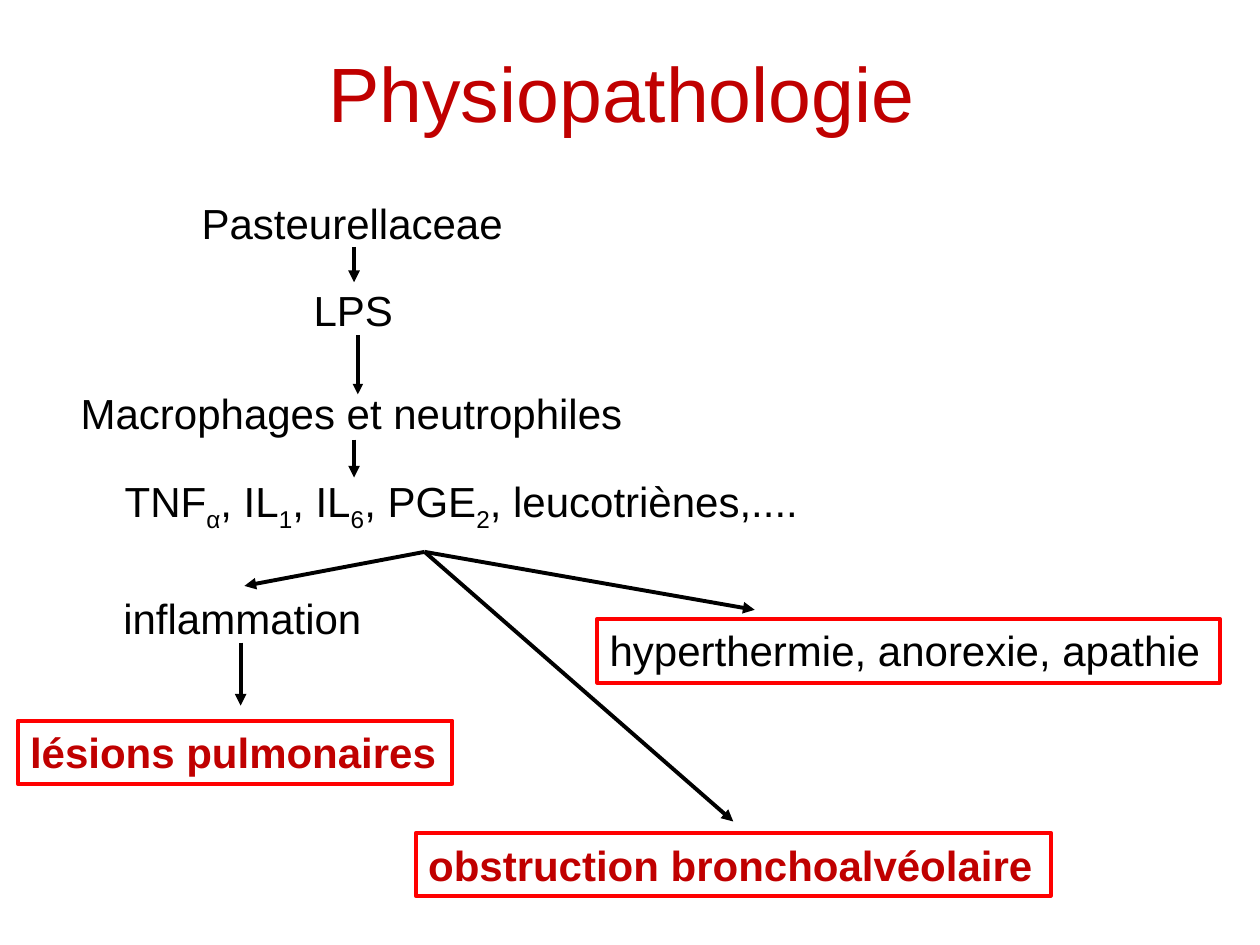
"""Build the Physiopathologie flow diagram slide."""
from dataclasses import dataclass

from lxml import etree
from pptx import Presentation
from pptx.dml.color import RGBColor
from pptx.enum.shapes import MSO_CONNECTOR, MSO_SHAPE
from pptx.enum.text import MSO_ANCHOR, MSO_AUTO_SIZE, PP_ALIGN
from pptx.oxml.ns import qn
from pptx.util import Inches, Pt

STRAIGHT, RECTANGLE = MSO_CONNECTOR.STRAIGHT, MSO_SHAPE.RECTANGLE
TOP, MIDDLE = MSO_ANCHOR.TOP, MSO_ANCHOR.MIDDLE
LEFT, CENTER = PP_ALIGN.LEFT, PP_ALIGN.CENTER
FIT_SHAPE, NO_FIT = MSO_AUTO_SIZE.SHAPE_TO_FIT_TEXT, MSO_AUTO_SIZE.NONE

COLORS = {"text": "000000", "accent": "C00000", "border": "FF0000"}
SUBSCRIPT = "-25000"
WIDE, TIGHT = (0.1, 0.05), (0.06, 0.01)


@dataclass
class Label:
    """Text at a place; pieces between bars alternate normal and subscript."""
    text: str
    at: tuple[float, float, float, float]
    inset: tuple[float, float] = WIDE
    anchor: MSO_ANCHOR = TOP
    align: PP_ALIGN = LEFT
    fit: MSO_AUTO_SIZE = FIT_SHAPE
    wrap: bool = False
    spacing: float = 1.0
    size: int = 24
    color: str = "text"
    bold: bool = False
    boxed: bool = False


@dataclass
class Arrow:
    """Line with a triangle at its end."""
    start: tuple[float, float]
    end: tuple[float, float]
    width: float = 2.25


STEP = {"inset": TIGHT, "anchor": MIDDLE}
OUTCOME = {"color": "accent", "bold": True, "boxed": True}
LABELS = [
    Label("Physiopathologie", (0.45, 0.22, 8.97, 1.16), anchor=MIDDLE, align=CENTER,
          fit=NO_FIT, wrap=True, spacing=0.8, size=44, color="accent"),
    Label("Pasteurellaceae", (1.54, 1.53, 2.54, 0.43), spacing=1.1, **STEP),
    Label("LPS", (2.43, 2.24, 0.77, 0.43), **STEP),
    Label("Macrophages et neutrophiles", (0.58, 3.06, 4.47, 0.43), **STEP),
    Label("TNF|α|, IL|1|, IL|6|, PGE|2|, leucotriènes,....", (0.93, 3.79, 5.64, 0.43), **STEP),
    Label("inflammation", (0.88, 4.65, 2.11, 0.51)),
    Label("lésions pulmonaires", (0.14, 5.72, 3.45, 0.5), **OUTCOME),
    Label("hyperthermie, anorexie, apathie", (4.74, 4.91, 4.94, 0.51), boxed=True),
    Label("obstruction bronchoalvéolaire", (3.3, 6.61, 5.04, 0.5), **OUTCOME),
]

MEDIATORS = (3.37, 4.38)
ARROWS = [
    Arrow((2.81, 1.96), (2.81, 2.24)),
    Arrow((2.84, 2.66), (2.84, 3.13), 2),
    Arrow((2.81, 3.49), (2.81, 3.79)),
    Arrow((1.91, 5.1), (1.91, 5.6)),
    *(Arrow(MEDIATORS, end) for end in [(1.94, 4.65), (5.99, 4.84), (5.82, 6.52)]),
]


def rgb(name: str) -> RGBColor:
    """Look up a named colour."""
    return RGBColor.from_string(COLORS[name])


def apply(target: object, values: dict) -> None:
    """Set each named attribute on the target."""
    for name, value in values.items():
        setattr(target, name, value)


def add_label(shapes, label: Label) -> None:
    """Draw one label, with a red border if it is boxed."""
    place = [Inches(v) for v in label.at]
    if label.boxed:
        sp = shapes.add_shape(RECTANGLE, *place)
        sp.shadow.inherit = False
        sp.fill.background()
        sp.line.color.rgb = rgb("border")
        sp.line.width = Pt(2.25)
    else:
        sp = shapes.add_textbox(*place)
    side, end = (Inches(v) for v in label.inset)
    tf = sp.text_frame
    apply(tf, {"margin_left": side, "margin_right": side, "margin_top": end,
               "margin_bottom": end, "word_wrap": label.wrap,
               "auto_size": label.fit, "vertical_anchor": label.anchor})
    p = tf.paragraphs[0]
    apply(p, {"alignment": label.align, "line_spacing": label.spacing})
    for i, piece in enumerate(label.text.split("|")):
        r = p.add_run()
        r.text = piece
        apply(r.font, {"name": "Arial", "size": Pt(label.size), "bold": label.bold})
        r.font.color.rgb = rgb(label.color)
        if i % 2:
            r._r.get_or_add_rPr().set("baseline", SUBSCRIPT)


def add_arrow(shapes, arrow: Arrow) -> None:
    """Draw one arrow without a shadow."""
    cxn = shapes.add_connector(STRAIGHT, *(Inches(v) for v in arrow.start + arrow.end))
    cxn.line.color.rgb = rgb("text")
    cxn.line.width = Pt(arrow.width)
    etree.SubElement(cxn.line._get_or_add_ln(), qn("a:tailEnd"), type="triangle")
    etree.SubElement(cxn._element.spPr, qn("a:effectLst"))


def main() -> None:
    """Build and save the slide."""
    prs = Presentation()
    apply(prs, {"slide_width": Inches(10), "slide_height": Inches(7.5)})
    s = prs.slides.add_slide(prs.slide_layouts[6])
    for label in LABELS:
        add_label(s.shapes, label)
    for arrow in ARROWS:
        add_arrow(s.shapes, arrow)
    prs.save("out.pptx")


if __name__ == "__main__":
    main()
